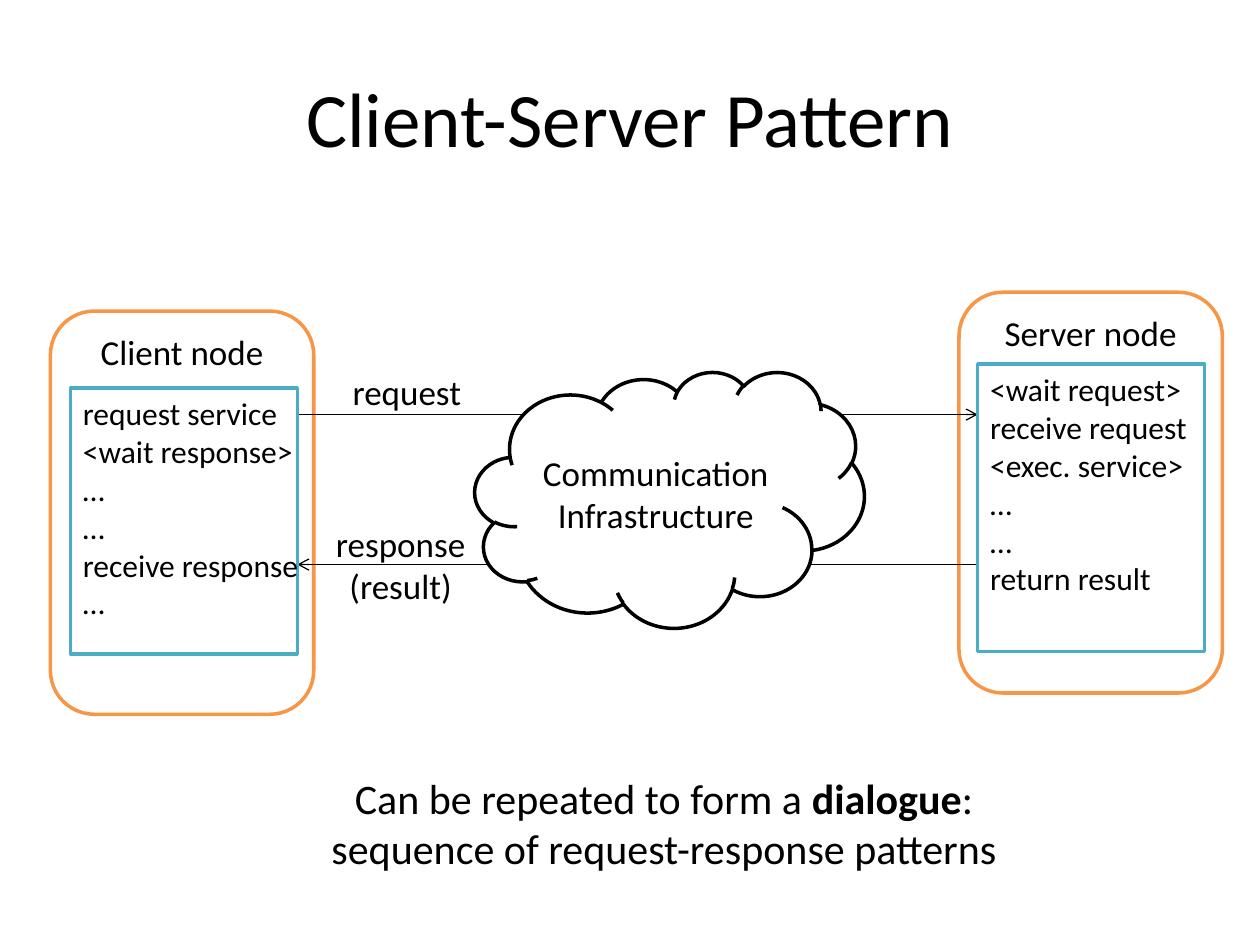
from dataclasses import dataclass

import pptx
import pptx.dml.color
import pptx.enum.shapes
import pptx.enum.text
import pptx.oxml
import pptx.oxml.ns
import pptx.util

Pt = pptx.util.Pt
Kind = pptx.enum.shapes.MSO_SHAPE
Align = pptx.enum.text.PP_ALIGN
Anchor = pptx.enum.text.MSO_ANCHOR

FONT = "Calibri"
COLOURS = {"ink": "000000", "paper": "FFFFFF", "node": "F79646", "panel": "4BACC6"}


@dataclass(frozen=True)
class Span:
    text: str
    bold: bool = False


@dataclass(frozen=True)
class Block:
    left: float
    top: float
    width: float
    height: float
    lines: tuple[tuple[Span, ...], ...]
    size: float
    align: Align = Align.CENTER
    anchor: Anchor = Anchor.TOP
    wrap: bool = True
    kind: Kind | None = None
    outline: str = "ink"
    corner: float | None = None


@dataclass(frozen=True)
class Arrow:
    start: float
    end: float
    level: float


def plain(*texts: str) -> tuple[tuple[Span, ...], ...]:
    """Make one single-span line from each text."""
    return tuple((Span(text),) for text in texts)


def colour(name: str) -> pptx.dml.color.RGBColor:
    """Look up a named colour."""
    return pptx.dml.color.RGBColor.from_string(COLOURS[name])


def node(left: float, top: float, height: float, name: str) -> Block:
    """Describe a rounded network node."""
    return Block(left, top, 150.5, height, plain(name), 20,
                 kind=Kind.ROUNDED_RECTANGLE, outline="node")


def panel(left: float, top: float, height: float, *steps: str) -> Block:
    """Describe a square panel listing the steps of a node."""
    return Block(left, top, 129.6, height, plain(*steps), 18, Align.LEFT, wrap=False,
                 kind=Kind.ROUNDED_RECTANGLE, outline="panel", corner=0)


def draw_block(page, block: Block) -> None:
    """Draw a block as a text box or an outlined shape."""
    place = [Pt(v) for v in (block.left, block.top, block.width, block.height)]
    if block.kind is None:
        box = page.shapes.add_textbox(*place)
    else:
        box = page.shapes.add_shape(block.kind, *place)
        box.shadow.inherit = False
        box.fill.solid()
        box.fill.fore_color.rgb = colour("paper")
        box.line.color.rgb = colour(block.outline)
        box.line.width = Pt(2)
    if block.corner is not None:
        box.adjustments[0] = block.corner
    frame = box.text_frame
    frame.word_wrap = block.wrap
    frame.vertical_anchor = block.anchor
    for index, line in enumerate(block.lines):
        para = frame.add_paragraph() if index else frame.paragraphs[0]
        para.alignment = block.align
        for part in line:
            span = para.add_run()
            span.text = part.text
            span.font.name = FONT
            span.font.size = Pt(block.size)
            span.font.bold = part.bold
            span.font.color.rgb = colour("ink")


def draw_arrow(page, arrow: Arrow) -> None:
    """Draw a thin horizontal arrow with an open head."""
    line = page.shapes.add_connector(
        pptx.enum.shapes.MSO_CONNECTOR.STRAIGHT,
        Pt(arrow.start), Pt(arrow.level), Pt(arrow.end), Pt(arrow.level))
    line.line.color.rgb = colour("ink")
    line.line.width = Pt(0.75)
    head = pptx.oxml.parse_xml(f'<a:tailEnd {pptx.oxml.ns.nsdecls("a")} type="arrow"/>')
    line.line._get_or_add_ln().append(head)
    effects = pptx.oxml.parse_xml(f'<a:effectLst {pptx.oxml.ns.nsdecls("a")}/>')
    line._element.spPr.append(effects)


ITEMS = (
    Block(36, 21.6, 648, 90, plain("Client-Server Pattern"), 44, anchor=Anchor.MIDDLE),
    node(548, 167, 229, "Server node"),
    node(28.8, 177.8, 230.4, "Client node"),
    Arrow(561.6, 169.9, 322.6),
    Arrow(157.7, 558.7, 236.9),
    Block(194.4, 208.1, 77, 31.7, plain("request"), 20, Align.LEFT, wrap=False),
    panel(40.3, 221.8, 151.9, "request service", "<wait response>", "…", "…",
          "receive response", "…"),
    Block(184.3, 295.2, 89.3, 55.4, plain("response", "(result)"), 20, wrap=False),
    panel(558.7, 208.1, 164.2, "<wait request>", "receive request", "<exec. service>",
          "…", "…", "return result"),
    Block(271.4, 212.4, 222.5, 146.2, plain("Communication", "Infrastructure"), 20,
          anchor=Anchor.MIDDLE, kind=Kind.CLOUD),
    Block(179.3, 437.8, 400.3, 65.5,
          ((Span("Can be repeated to form a "), Span("dialogue", True), Span(":")),
           *plain("sequence of request-response patterns")), 24, wrap=False),
)


def main() -> None:
    """Build and save the deck."""
    deck = pptx.Presentation()
    deck.slide_width, deck.slide_height = Pt(720), Pt(540)
    page = deck.slides.add_slide(deck.slide_layouts[6])
    for item in ITEMS:
        if isinstance(item, Arrow):
            draw_arrow(page, item)
        else:
            draw_block(page, item)
    deck.save("out.pptx")


if __name__ == "__main__":
    main()
